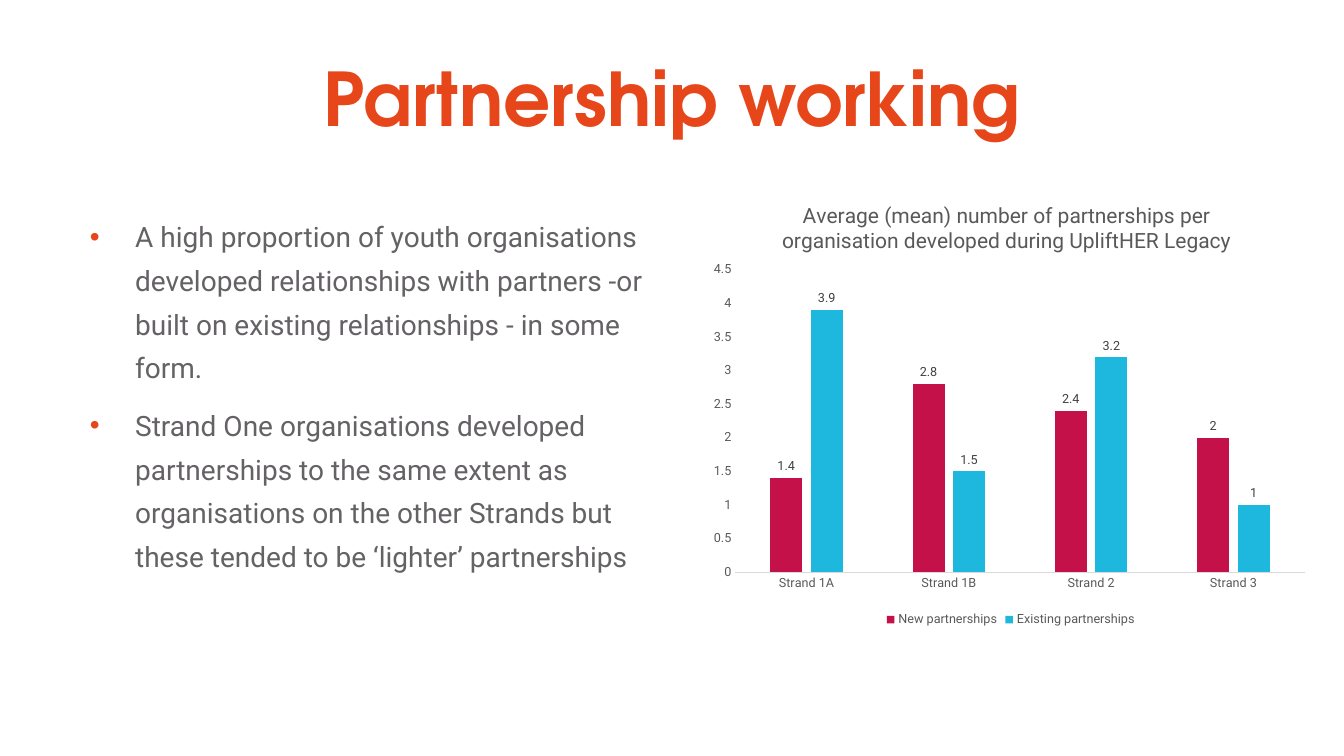
from lxml.etree import SubElement
from pptx import Presentation
from pptx.chart.data import CategoryChartData
from pptx.dml.color import RGBColor
from pptx.enum.chart import XL_CHART_TYPE, XL_LABEL_POSITION, XL_LEGEND_POSITION, XL_TICK_MARK
from pptx.enum.text import MSO_ANCHOR, MSO_AUTO_SIZE, PP_ALIGN
from pptx.oxml import parse_xml
from pptx.oxml.ns import nsdecls, qn
from pptx.util import Inches, Pt

ORANGE, GREY, CRIMSON, CYAN = "E64619", "656265", "C51149", "1EB8DF"
AXIS_TEXT, LABEL_TEXT, AXIS_LINE = "595959", "404040", "D9D9D9"
HEADING_FONT, BODY_FONT = "TeX Gyre Adventor", "Roboto"

TITLE = "Partnership working"
POINTS = [
    "A high proportion of youth organisations developed relationships with partners -or "
    "built on existing relationships - in some form.",
    "Strand One organisations developed partnerships to the same extent as organisations "
    "on the other Strands but these tended to be ‘lighter’ partnerships",
]
CHART_TITLE = ("Average (mean) number of partnerships per organisation "
               "developed during UpliftHER Legacy")
STRANDS = ["Strand 1A", "Strand 1B", "Strand 2", "Strand 3"]
PARTNERSHIPS = [
    ("New partnerships", CRIMSON, [1.4, 2.8, 2.4, 2]),
    ("Existing partnerships", CYAN, [3.9, 1.5, 3.2, 1]),
]


def color(hex_string):
    return RGBColor.from_string(hex_string)


def format_font(font, size, hex_color, name=BODY_FONT, bold=False):
    font.size, font.name, font.bold = Pt(size), name, bold
    font.color.rgb = color(hex_color)


def write(paragraph, text, **font_format):
    run = paragraph.add_run()
    run.text = text
    format_font(run.font, **font_format)


def add_bullet(paragraph, hex_color, indent):
    properties = paragraph._p.get_or_add_pPr()
    properties.set("marL", str(indent))
    properties.set("indent", str(-indent))
    bullet_color = SubElement(properties, qn("a:buClr"))
    SubElement(bullet_color, qn("a:srgbClr"), val=hex_color)
    SubElement(properties, qn("a:buFont"), typeface="Arial")
    SubElement(properties, qn("a:buChar"), char="•")


def chart_layout(**shares):
    """Return a manual layout whose x, y, w and h are shares of the chart."""
    modes = "".join(f'<c:{axis}Mode val="edge"/>' for axis in "xy")
    values = "".join(f'<c:{key} val="{value}"/>' for key, value in shares.items())
    target = '<c:layoutTarget val="inner"/>' if "w" in shares else ""
    return parse_xml(f'<c:layout {nsdecls("c")}><c:manualLayout>{target}{modes}{values}'
                     "</c:manualLayout></c:layout>")


def set_layout(element, layout, after=None):
    """Replace the layout of a chart part, placed after the named child or first."""
    for old_layout in element.findall(qn("c:layout")):
        element.remove(old_layout)
    if after:
        element.find(qn(after)).addnext(layout)
    else:
        element.insert(0, layout)


class SlideBuilder:
    def __init__(self, width, height):
        self.presentation = Presentation()
        self.presentation.slide_width = self.width = Inches(width)
        self.presentation.slide_height = self.height = Inches(height)
        self.slide = self.presentation.slides.add_slide(self.presentation.slide_layouts[1])

    def box(self, left, top, width, height):
        """Turn percentages of the slide into lengths."""
        return [int(share * side / 100) for share, side in
                zip((left, top, width, height), (self.width, self.height) * 2)]

    def place(self, shape, area):
        shape.left, shape.top, shape.width, shape.height = self.box(*area)
        frame = shape.text_frame
        frame.word_wrap, frame.auto_size = True, MSO_AUTO_SIZE.NONE
        return frame

    def title(self, text, area):
        frame = self.place(self.slide.shapes.title, area)
        frame.vertical_anchor = MSO_ANCHOR.MIDDLE
        paragraph = frame.paragraphs[0]
        paragraph.alignment = PP_ALIGN.CENTER
        write(paragraph, text, size=52.8, hex_color=ORANGE, name=HEADING_FONT, bold=True)

    def bullets(self, points, area):
        frame = self.place(self.slide.placeholders[1], area)
        frame.vertical_anchor = MSO_ANCHOR.TOP
        for index, point in enumerate(points):
            paragraph = frame.add_paragraph() if index else frame.paragraphs[0]
            add_bullet(paragraph, ORANGE, Inches(0.45))
            paragraph.line_spacing = 1.3
            paragraph.space_before = Pt(4 if index else 0)
            paragraph.space_after = Pt(6)
            write(paragraph, point, size=20, hex_color=GREY)

    def column_chart(self, title, categories, series_list, area):
        data = CategoryChartData()
        data.categories = categories
        for name, _, values in series_list:
            data.add_series(name, values)
        chart = self.slide.shapes.add_chart(
            XL_CHART_TYPE.COLUMN_CLUSTERED, *self.box(*area), data).chart
        format_font(chart.font, 9, AXIS_TEXT)

        chart.has_title = True
        write(chart.chart_title.text_frame.paragraphs[0], title, size=15, hex_color=AXIS_TEXT)
        set_layout(chart.chart_title._element, chart_layout(x=0.12, y=0.04), after="c:tx")
        set_layout(chart._chartSpace.chart.plotArea, chart_layout(x=0.05, y=0.2, w=0.93, h=0.67))

        chart.has_legend = True
        chart.legend.position = XL_LEGEND_POSITION.BOTTOM
        chart.legend.include_in_layout = False
        format_font(chart.legend.font, 9, AXIS_TEXT)
        self.style_axes(chart)

        plot = chart.plots[0]
        plot.gap_width, plot.overlap, plot.vary_by_categories = 219, -27, False
        for series, (_, fill, _) in zip(plot.series, series_list):
            series.format.fill.solid()
            series.format.fill.fore_color.rgb = color(fill)
            labels = series.data_labels
            labels.show_value, labels.position = True, XL_LABEL_POSITION.OUTSIDE_END
            format_font(labels.font, 9, LABEL_TEXT)

    def style_axes(self, chart):
        for axis in (chart.category_axis, chart.value_axis):
            axis.major_tick_mark = axis.minor_tick_mark = XL_TICK_MARK.NONE
            axis.has_major_gridlines = False
            format_font(axis.tick_labels.font, 9, AXIS_TEXT)
        category_line = chart.category_axis.format.line
        category_line.color.rgb, category_line.width = color(AXIS_LINE), Pt(0.75)
        value_axis = chart.value_axis
        value_axis.format.line.fill.background()
        value_axis.minimum_scale, value_axis.maximum_scale = 0, 4.5
        value_axis.major_unit = 0.5


def main():
    builder = SlideBuilder(13.33, 7.5)
    builder.title(TITLE, (9.45, 4.67, 81.1, 16.4))
    builder.bullets(POINTS, (5.93, 27.07, 42.99, 59.73))
    builder.column_chart(CHART_TITLE, STRANDS, PARTNERSHIPS, (52.44, 23.73, 45.54, 59.73))
    builder.presentation.save("out.pptx")


if __name__ == "__main__":
    main()
